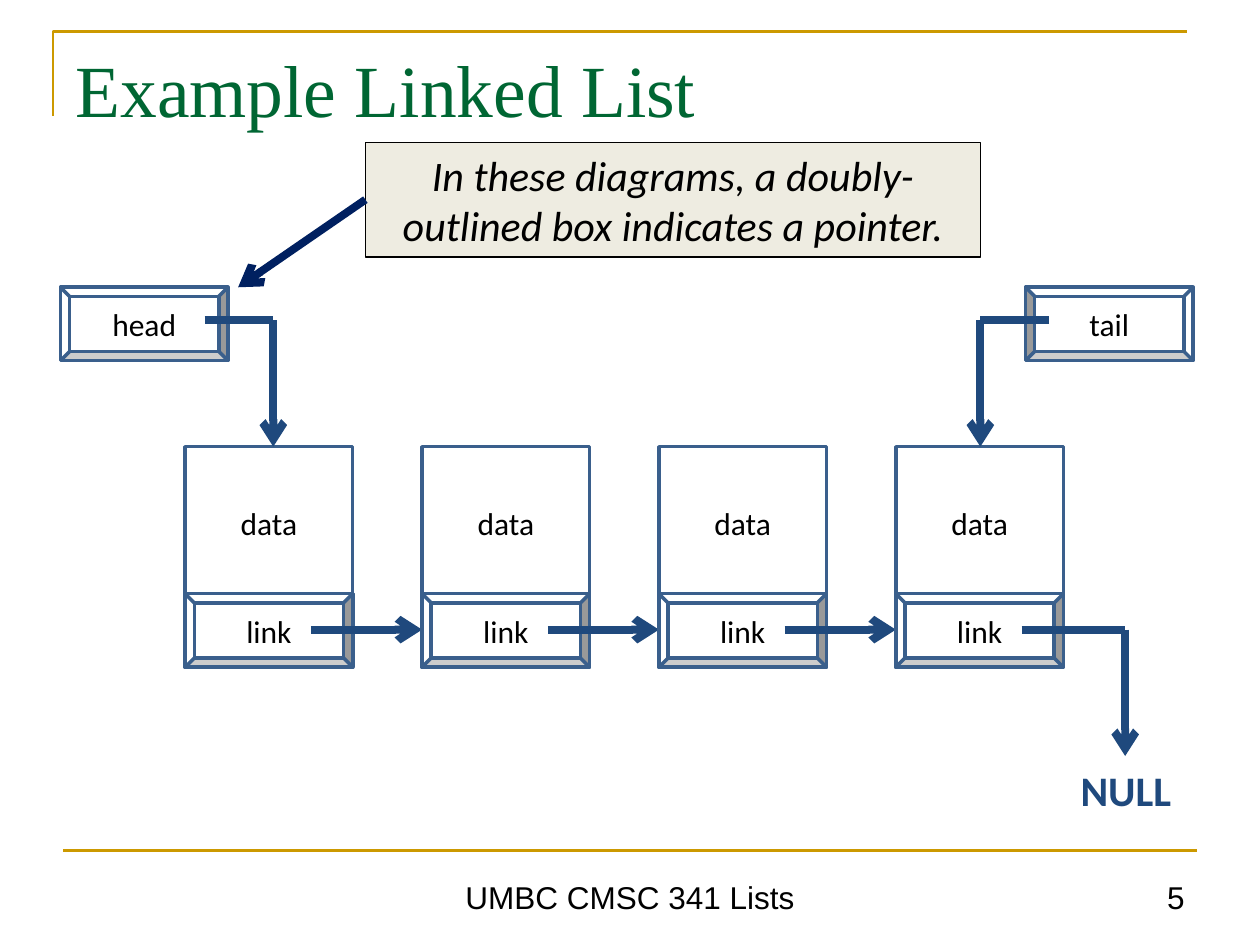
from dataclasses import dataclass

from pptx import Presentation
from pptx.dml.color import RGBColor
from pptx.enum.shapes import MSO_CONNECTOR, MSO_SHAPE
from pptx.enum.text import MSO_ANCHOR, MSO_AUTO_SIZE, PP_ALIGN
from pptx.oxml.ns import qn
from pptx.oxml.xmlchemy import OxmlElement
from pptx.util import Inches, Pt

COLUMNS, ROWS = 40, 30
WIDTH, HEIGHT = Inches(10), Inches(7.5)

GOLD = RGBColor(0xCC, 0x99, 0x00)
GREEN = RGBColor(0x00, 0x66, 0x33)
BLACK = RGBColor(0x00, 0x00, 0x00)
WHITE = RGBColor(0xFF, 0xFF, 0xFF)
CREAM = RGBColor(0xEE, 0xEC, 0xE1)
OUTLINE = RGBColor(0x3A, 0x5F, 0x8C)
WIRE = RGBColor(0x1F, 0x49, 0x7D)
NAVY = RGBColor(0x00, 0x20, 0x60)

POINTER_WIDTH, POINTER_HEIGHT = 5.32, 2.33
NODE_HEIGHT = 7
NODE_TOP = 14.18
NODE_LEFT, NODE_PITCH, NODE_COUNT = 5.88, 7.52, 4


@dataclass
class Box:
    left: float
    top: float
    width: float
    height: float


def across(columns):
    return round(WIDTH * columns / COLUMNS)


def down(rows):
    return round(HEIGHT * rows / ROWS)


def place(box):
    return across(box.left), down(box.top), across(box.width), down(box.height)


def write(shape, text, size=18, font="Calibri", color=BLACK, bold=False,
          italic=False, align=PP_ALIGN.CENTER, anchor=MSO_ANCHOR.MIDDLE):
    frame = shape.text_frame
    frame.word_wrap = True
    frame.auto_size = MSO_AUTO_SIZE.NONE
    frame.vertical_anchor = anchor
    para = frame.paragraphs[0]
    para.alignment = align
    span = para.add_run()
    span.text = text
    span.font.size = Pt(size)
    span.font.name = font
    span.font.color.rgb = color
    span.font.bold = bold
    span.font.italic = italic


def add_label(page, box, text, **style):
    write(page.shapes.add_textbox(*place(box)), text, **style)


def add_panel(page, box, text, kind=MSO_SHAPE.RECTANGLE, fill=WHITE,
              outline=OUTLINE, weight=2, **style):
    panel = page.shapes.add_shape(kind, *place(box))
    panel.shadow.inherit = False
    panel.fill.solid()
    panel.fill.fore_color.rgb = fill
    panel.line.color.rgb = outline
    panel.line.width = Pt(weight)
    write(panel, text, **style)
    return panel


def add_line(page, start, end, color=WIRE, weight=4.5, arrow=False):
    line = page.shapes.add_connector(
        MSO_CONNECTOR.STRAIGHT, across(start[0]), down(start[1]), across(end[0]), down(end[1]))
    line.line.color.rgb = color
    line.line.width = Pt(weight)
    properties = line._element.spPr
    if arrow:
        head = OxmlElement("a:tailEnd")
        head.set("type", "arrow")
        properties.find(qn("a:ln")).append(head)
    properties.append(OxmlElement("a:effectLst"))


def add_elbow(page, start, end):
    corner = (end[0], start[1])
    add_line(page, corner, end, arrow=True)
    add_line(page, start, corner)


def add_pointer(page, box, text, mirrored=False):
    bevel = add_panel(page, box, text, kind=MSO_SHAPE.BEVEL)
    if mirrored:
        bevel._element.spPr.find(qn("a:xfrm")).set("flipH", "1")


def add_node(page, box):
    cell = add_panel(page, box, "data")
    cell.text_frame.margin_bottom = down(POINTER_HEIGHT)
    link_top = box.top + box.height - POINTER_HEIGHT
    add_pointer(page, Box(box.left, link_top, box.width, POINTER_HEIGHT), "link")


def add_chain(page, box):
    link_row = box.top + 0.83 * box.height
    for index in range(NODE_COUNT):
        left = box.left + index * NODE_PITCH
        add_node(page, Box(left, box.top, POINTER_WIDTH, box.height))
        start = (left + 0.75 * POINTER_WIDTH, link_row)
        if index < NODE_COUNT - 1:
            add_line(page, start, (left + NODE_PITCH, link_row), arrow=True)
        else:
            add_elbow(page, start, (35.72, 24))
    add_label(page, Box(32.64, 24.04, 6.2, 2.04), "NULL", size=24, color=WIRE, bold=True)


def add_entry(page, box, text, mirrored=False):
    add_pointer(page, box, text, mirrored)
    start, end = (0.14, -0.27) if mirrored else (0.86, 1.27)
    add_elbow(page, (box.left + start * box.width, box.top + 0.45 * box.height),
              (box.left + end * box.width, NODE_TOP))


def add_callout(page, box):
    add_panel(page, box, "In these diagrams, a doubly-outlined box indicates a pointer.",
              fill=CREAM, outline=BLACK, weight=0.75, size=24, italic=True)
    add_line(page, (box.left, box.top + box.height / 2), (7.56, 9.12), color=NAVY, arrow=True)


def add_header(page, box):
    builder = page.shapes.build_freeform(across(box.left), down(box.top + box.height))
    builder.add_line_segments(
        [(across(box.left), down(box.top)),
         (across(box.left + box.width), down(box.top))], close=False)
    corner = builder.convert_to_shape()
    corner.shadow.inherit = False
    corner.fill.background()
    corner.line.color.rgb = GOLD
    corner.line.width = Pt(1.5)
    title = page.shapes.title
    title.left, title.top, title.width, title.height = place(
        Box(box.left + 0.32, box.top + 0.2, box.width, 4.44))
    write(title, "Example Linked List", size=42, font="Times New Roman",
          color=GREEN, align=PP_ALIGN.LEFT, anchor=MSO_ANCHOR.TOP)


def add_footer(page, box):
    right = box.left + box.width
    add_line(page, (box.left, box.top), (right, box.top), color=GOLD, weight=1.5)
    top, height = box.top + 0.32, box.height - 0.32
    style = dict(font="Arial", anchor=MSO_ANCHOR.BOTTOM)
    add_label(page, Box(box.left + 5, top, box.width - 10, height), "UMBC CMSC 341 Lists", **style)
    add_label(page, Box(right - 9.32, top, 9.32, height), "5", align=PP_ALIGN.RIGHT, **style)


def main():
    deck = Presentation()
    deck.slide_width, deck.slide_height = WIDTH, HEIGHT
    page = deck.slides.add_slide(deck.slide_layouts[5])
    add_header(page, Box(1.68, 1, 36, 2.68))
    add_footer(page, Box(2, 27, 36, 2.28))
    add_chain(page, Box(NODE_LEFT, NODE_TOP, NODE_COUNT * NODE_PITCH, NODE_HEIGHT))
    add_entry(page, Box(1.92, 9.12, POINTER_WIDTH, POINTER_HEIGHT), "head")
    add_entry(page, Box(32.56, 9.12, POINTER_WIDTH, POINTER_HEIGHT), "tail", mirrored=True)
    add_callout(page, Box(11.6, 4.52, 19.52, 3.64))
    deck.save("out.pptx")


if __name__ == "__main__":
    main()
